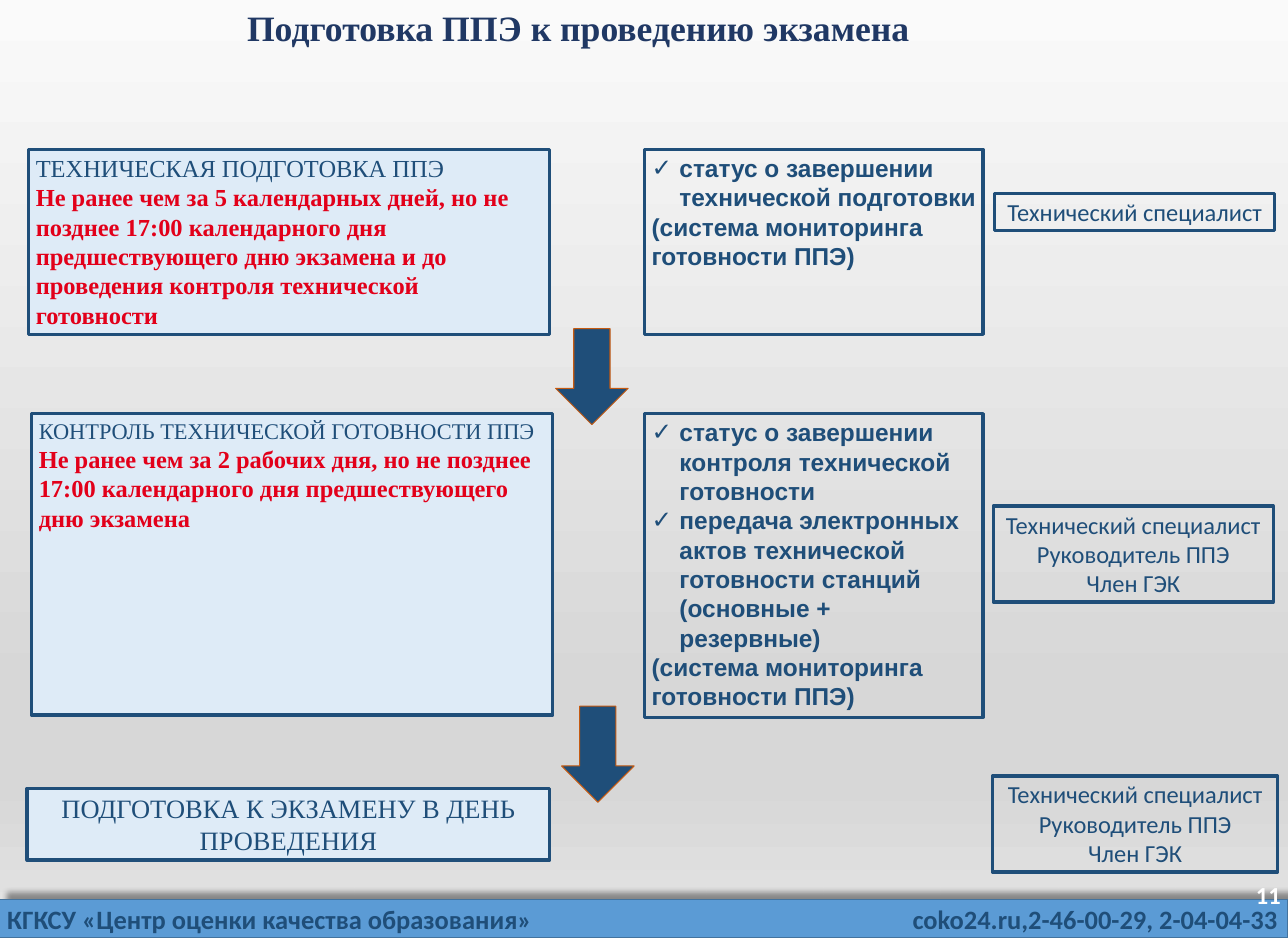
from lxml import etree
from pptx import Presentation
from pptx.dml.color import RGBColor
from pptx.enum.shapes import MSO_SHAPE
from pptx.enum.text import MSO_ANCHOR, MSO_AUTO_SIZE, PP_ALIGN
from pptx.oxml.ns import qn
from pptx.util import Emu, Inches, Pt

RECT, ARROW = MSO_SHAPE.RECTANGLE, MSO_SHAPE.DOWN_ARROW
TOP, MIDDLE = MSO_ANCHOR.TOP, MSO_ANCHOR.MIDDLE
LEFT, CENTER, RIGHT = PP_ALIGN.LEFT, PP_ALIGN.CENTER, PP_ALIGN.RIGHT
NO_FIT = MSO_AUTO_SIZE.NONE
W, H = Inches(17.57), Inches(12.79)
TITLE_ONLY = 5
C = {"navy": "1F4E79", "title": "203864", "red": "E2001A", "pale": "DEEBF7",
     "bar": "5B9BD5", "bar_edge": "43739E", "rust": "C55A11",
     "white": "FFFFFF", "black": "000000"}
BACKDROP = [(0, "FAFAFA"), (74, "D7D7D7"), (83, "D7D7D7"), (100, "E4E4E4")]

STAGE = {"name": "Times New Roman", "size": 24, "color": "navy"}
STAGE_SMALL = {**STAGE, "size": 22}
STAGE_LARGE = {**STAGE, "size": 26}
DEADLINE = {**STAGE, "color": "red", "bold": True}
STATUS = {"name": "Arial", "size": 24, "color": "navy", "bold": True}
ROLE = {"name": "Calibri", "size": 24, "color": "navy"}
FOOTER = {**ROLE, "size": 26, "bold": True}
NUMBER = {**ROLE, "color": "white", "bold": True}
TITLE = {"name": "Times New Roman", "size": 35, "color": "title", "bold": True}

MONITORING = "(система мониторинга готовности ППЭ)"
SPECIALIST = "Технический специалист"
TEAM = [SPECIALIST, "Руководитель ППЭ", "Член ГЭК"]


def rgb(name):
    """Return the named colour."""
    return RGBColor.from_string(C[name])


def share(x, y, w, h):
    """Turn percentages of the slide's size into lengths."""
    return [Emu(round(v * side / 100)) for v, side in zip((x, y, w, h), (W, H, W, H))]


def format_run(r, style):
    """Apply a dict of font values to a run."""
    values = {**style, "size": Pt(style["size"])}
    r.font.color.rgb = rgb(values.pop("color"))
    for key, value in values.items():
        setattr(r.font, key, value)


def add_check(p):
    """Give a paragraph a check mark and a hanging indent."""
    pPr = p._p.get_or_add_pPr()
    pPr.set("marL", str(Inches(0.38)))
    pPr.set("indent", str(-Inches(0.38)))
    etree.SubElement(pPr, qn("a:buFont"), typeface="Arial")
    etree.SubElement(pPr, qn("a:buChar"), char="✓")


def write(sp, lines, align=LEFT, anchor=TOP, wrap=True):
    """Fill a shape with (text, style, checked) paragraphs."""
    tf = sp.text_frame
    frame = {"word_wrap": wrap, "vertical_anchor": anchor, "auto_size": NO_FIT}
    for key, value in frame.items():
        setattr(tf, key, value)
    for i, (text, style, checked) in enumerate(lines):
        p = tf.add_paragraph() if i else tf.paragraphs[0]
        p.alignment = align
        if checked:
            add_check(p)
        r = p.add_run()
        r.text = text
        format_run(r, style)


def add_block(s, kind, place, fill, line, width):
    """Add a preset shape with a fill and an outline."""
    sp = s.shapes.add_shape(kind, *share(*place))
    sp.shadow.inherit = False
    if fill:
        sp.fill.solid()
        sp.fill.fore_color.rgb = rgb(fill)
    else:
        sp.fill.background()
    sp.line.color.rgb = rgb(line)
    sp.line.width = Pt(width)
    return sp


def add_box(s, place, lines, fill=None, align=LEFT):
    """Add a navy-framed box with text."""
    write(add_block(s, RECT, place, fill, "navy", 3.25), lines, align)


def add_roles(s, place, roles):
    """Add a box that lists the people responsible."""
    add_box(s, place, [(role, ROLE, False) for role in roles], align=CENTER)


def add_label(s, place, text, style, **layout):
    """Add a one-line text box."""
    sp = s.shapes.add_textbox(*share(*place))
    write(sp, [(text, style, False)], **layout)


def add_backdrop(s):
    """Paint the vertical grey gradient."""
    fill = s.background.fill
    fill.gradient()
    fill.gradient_angle = 270
    stops = next(s._element.iter(qn("a:gsLst")))
    for stop in list(stops):
        stops.remove(stop)
    for pos, color in BACKDROP:
        gs = etree.SubElement(stops, qn("a:gs"), pos=str(pos * 1000))
        etree.SubElement(gs, qn("a:srgbClr"), val=color)


def add_footer(s):
    """Add the shadowed bar, both contact lines and the page number."""
    bar = add_block(s, RECT, (0, 95.86, 100, 4.14), "bar", "bar_edge", 1)
    effects = bar._element.spPr.find(qn("a:effectLst"))
    shadow = etree.SubElement(effects, qn("a:outerShdw"), blurRad=str(Pt(4)),
                              dist=str(Pt(10)), dir=str(315 * 60000), rotWithShape="0")
    color = etree.SubElement(shadow, qn("a:srgbClr"), val=C["black"])
    etree.SubElement(color, qn("a:alpha"), val="40000")
    add_label(s, (0, 95.86, 42.35, 4.22),
              "КГКСУ «Центр оценки качества образования»", FOOTER, wrap=False)
    add_label(s, (70.29, 95.86, 29.71, 4.22),
              "coko24.ru,2-46-00-29, 2-04-04-33", FOOTER, wrap=False)
    add_label(s, (77.52, 92.73, 22.48, 5.32), "11", NUMBER, align=RIGHT, anchor=MIDDLE)


def add_title(s):
    """Place and format the title placeholder."""
    sp = s.shapes.title
    sp.left, sp.top, sp.width, sp.height = share(6.72, -1.09, 76.38, 8.6)
    write(sp, [("Подготовка ППЭ к проведению экзамена", TITLE, False)], CENTER, MIDDLE)
    sp.text_frame.paragraphs[0].line_spacing = 0.9


def main():
    """Build the slide on exam preparation."""
    prs = Presentation()
    prs.slide_width, prs.slide_height = W, H
    s = prs.slides.add_slide(prs.slide_layouts[TITLE_ONLY])
    add_backdrop(s)
    add_footer(s)
    add_title(s)

    add_box(s, (2.22, 15.95, 40.47, 19.7), [
        ("ТЕХНИЧЕСКАЯ ПОДГОТОВКА ППЭ", STAGE, False),
        ("Не ранее чем за 5 календарных дней, но не позднее 17:00 календарного дня "
         "предшествующего дню экзамена и до проведения контроля технической готовности",
         DEADLINE, False)], "pale")
    add_box(s, (2.45, 44.1, 40.47, 32.13), [
        ("КОНТРОЛЬ ТЕХНИЧЕСКОЙ ГОТОВНОСТИ ППЭ", STAGE_SMALL, False),
        ("Не ранее чем за 2 рабочих дня, но не позднее 17:00 календарного дня "
         "предшествующего дню экзамена", DEADLINE, False)], "pale")
    add_box(s, (2.11, 84.05, 40.58, 7.66), [
        ("ПОДГОТОВКА К ЭКЗАМЕНУ В ДЕНЬ ПРОВЕДЕНИЯ", STAGE_LARGE, False)], "pale", CENTER)

    add_box(s, (50.03, 15.95, 26.29, 19.7), [
        ("статус о завершении технической подготовки", STATUS, True),
        (MONITORING, STATUS, False)])
    add_box(s, (50.03, 44.1, 26.29, 32.37), [
        ("статус о завершении контроля технической готовности", STATUS, True),
        ("передача электронных актов технической готовности станций "
         "(основные + резервные)", STATUS, True),
        (MONITORING, STATUS, False)])

    add_roles(s, (77.23, 20.64, 21.74, 3.91), [SPECIALIST])
    add_roles(s, (77.12, 53.95, 21.74, 10.24), TEAM)
    add_roles(s, (77.06, 82.72, 22.14, 10.24), TEAM)

    for x, y in ((43.14, 35.03), (43.6, 75.29)):
        add_block(s, ARROW, (x, y, 5.63, 10.24), "navy", "rust", 1)
    prs.save("out.pptx")


if __name__ == "__main__":
    main()
